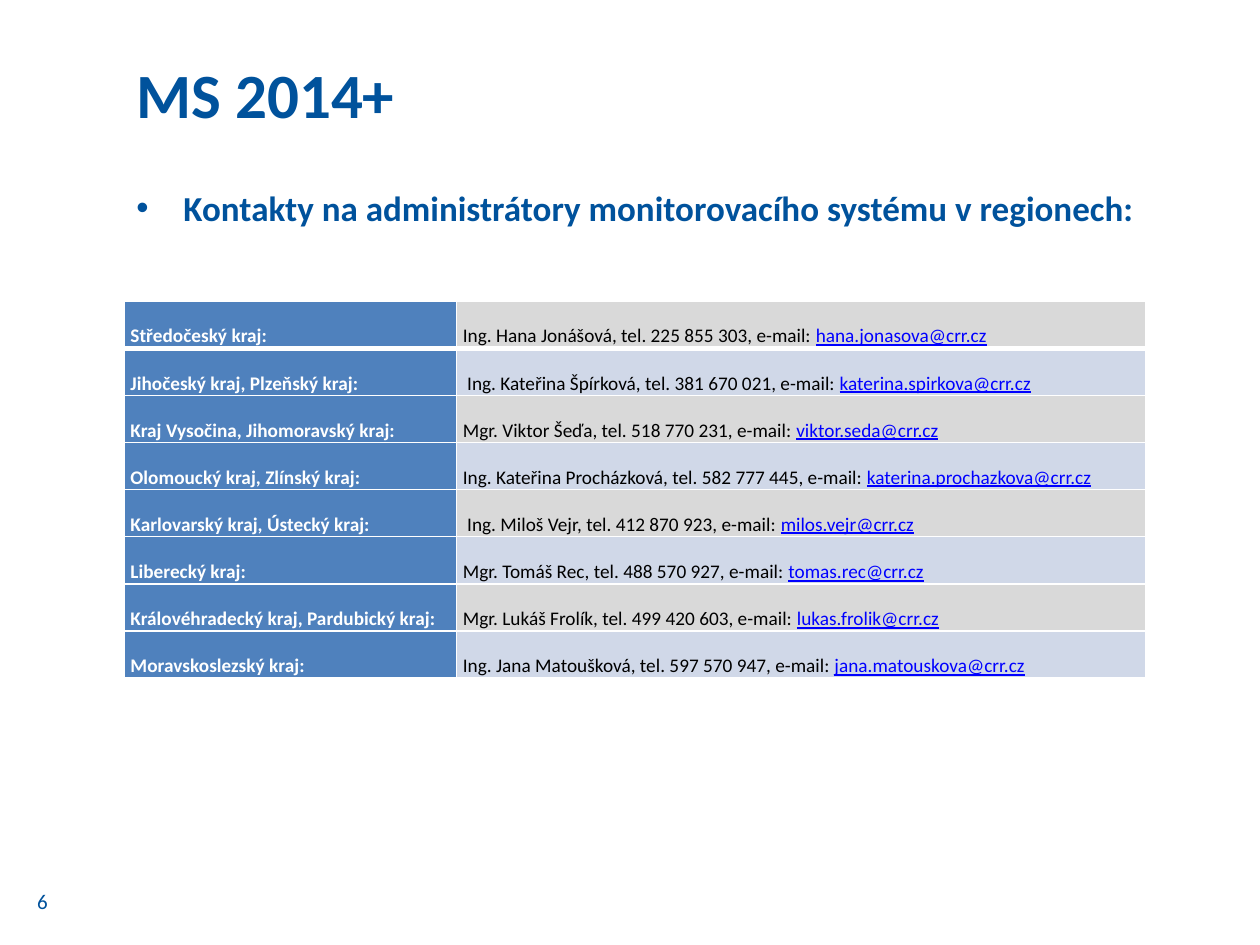
from lxml import etree
from pptx import Presentation
from pptx.dml.color import RGBColor
from pptx.enum.text import MSO_ANCHOR
from pptx.oxml.ns import qn
from pptx.util import Cm, Pt

TOP, MIDDLE, BOTTOM = MSO_ANCHOR.TOP, MSO_ANCHOR.MIDDLE, MSO_ANCHOR.BOTTOM
FONT = "Calibri"
NAVY = RGBColor(0x00, 0x52, 0x9C)
BLUE = RGBColor(0x4F, 0x81, 0xBD)
GREY = RGBColor(0xD9, 0xD9, 0xD9)
PALE = RGBColor(0xD0, 0xD8, 0xE8)
LINK = RGBColor(0x00, 0x00, 0xFF)
WHITE = RGBColor(0xFF, 0xFF, 0xFF)
BLACK = RGBColor(0x00, 0x00, 0x00)

LEFT = Cm(2.5)
ROW_HEIGHT = Cm(0.95)
COLUMN_WIDTHS = (Cm(6.7), Cm(13.9))

# Region, administrator, phone, e-mail
CONTACTS = [
    ("Středočeský kraj:", "Ing. Hana Jonášová", "225 855 303", "hana.jonasova@crr.cz"),
    ("Jihočeský kraj, Plzeňský kraj:", " Ing. Kateřina Špírková", "381 670 021",
     "katerina.spirkova@crr.cz"),
    ("Kraj Vysočina, Jihomoravský kraj:", "Mgr. Viktor Šeďa", "518 770 231",
     "viktor.seda@crr.cz"),
    ("Olomoucký kraj, Zlínský kraj:", "Ing. Kateřina Procházková", "582 777 445",
     "katerina.prochazkova@crr.cz"),
    ("Karlovarský kraj, Ústecký kraj:", " Ing. Miloš Vejr", "412 870 923",
     "milos.vejr@crr.cz"),
    ("Liberecký kraj:", "Mgr. Tomáš Rec", "488 570 927", "tomas.rec@crr.cz"),
    ("Královéhradecký kraj, Pardubický kraj:", "Mgr. Lukáš Frolík", "499 420 603",
     "lukas.frolik@crr.cz"),
    ("Moravskoslezský kraj:", "Ing. Jana Matoušková", "597 570 947",
     "jana.matouskova@crr.cz"),
]


def style_font(font, size, color, bold=False):
    font.name = FONT
    font.size = Pt(size)
    font.bold = bold
    font.color.rgb = color


def add_text(slide, text, left, top, width, height, size, bold=False,
             anchor=MIDDLE, bullet=False):
    box = slide.shapes.add_textbox(left, top, width, height)
    frame = box.text_frame
    frame.word_wrap = True
    frame.vertical_anchor = anchor
    para = frame.paragraphs[0]
    para.text = text
    if bullet:
        properties = para._p.get_or_add_pPr()
        properties.set("marL", str(Cm(0.95)))
        properties.set("indent", str(-Cm(0.95)))
        etree.SubElement(properties, qn("a:buFont")).set("typeface", "Arial")
        etree.SubElement(properties, qn("a:buChar")).set("char", "•")
        para.space_after = Pt(6)
    style_font(para.font, size, NAVY, bold)


def set_borders(cell, top, bottom):
    properties = cell._tc.get_or_add_tcPr()
    for side, width in (("L", 1), ("R", 1), ("T", top), ("B", bottom)):
        line = etree.SubElement(properties, qn(f"a:ln{side}"), w=str(Pt(width)))
        fill = etree.SubElement(line, qn("a:solidFill"))
        etree.SubElement(fill, qn("a:srgbClr"), val=str(WHITE))


def format_cell(cell, row, fill):
    cell.margin_left = cell.margin_right = Cm(0.13)
    cell.margin_top = cell.margin_bottom = 0
    cell.vertical_anchor = BOTTOM
    # A thicker rule closes the first row
    set_borders(cell, top=3 if row == 1 else 1, bottom=3 if row == 0 else 1)
    cell.fill.solid()
    cell.fill.fore_color.rgb = fill


def add_contact_table(slide):
    frame = slide.shapes.add_table(len(CONTACTS), 2, LEFT, Cm(6.07),
                                   sum(COLUMN_WIDTHS), ROW_HEIGHT * len(CONTACTS))
    table = frame.table
    for column, width in zip(table.columns, COLUMN_WIDTHS):
        column.width = width
    for row, (region, person, phone, email) in enumerate(CONTACTS):
        table.rows[row].height = ROW_HEIGHT
        region_cell, contact_cell = table.cell(row, 0), table.cell(row, 1)
        format_cell(region_cell, row, BLUE)
        format_cell(contact_cell, row, PALE if row % 2 else GREY)

        para = region_cell.text_frame.paragraphs[0]
        para.text = region
        style_font(para.font, 11, WHITE, bold=True)

        para = contact_cell.text_frame.paragraphs[0]
        style_font(para.font, 11, BLACK)
        para.add_run().text = f"{person}, tel. {phone}, e-mail: "
        span = para.add_run()
        span.text = email
        span.font.color.rgb = LINK
        span.font.underline = True


def main():
    deck = Presentation()
    deck.slide_width, deck.slide_height = Cm(25.4), Cm(19.05)
    slide = deck.slides.add_slide(deck.slide_layouts[6])

    # Heading and lead-in
    add_text(slide, "MS 2014+", LEFT, Cm(0.74), Cm(21.64), Cm(2.29), 36, bold=True)
    add_text(slide, "Kontakty na administrátory monitorovacího systému v regionech:",
             LEFT, Cm(3.63), Cm(21.64), Cm(13.39), 20, bold=True,
             anchor=TOP, bullet=True)

    # Regional contacts
    add_contact_table(slide)

    # Page number
    add_text(slide, "6", Cm(0.5), Cm(17.65), Cm(1.4), Cm(1.02), 12)

    deck.save("out.pptx")


if __name__ == "__main__":
    main()
